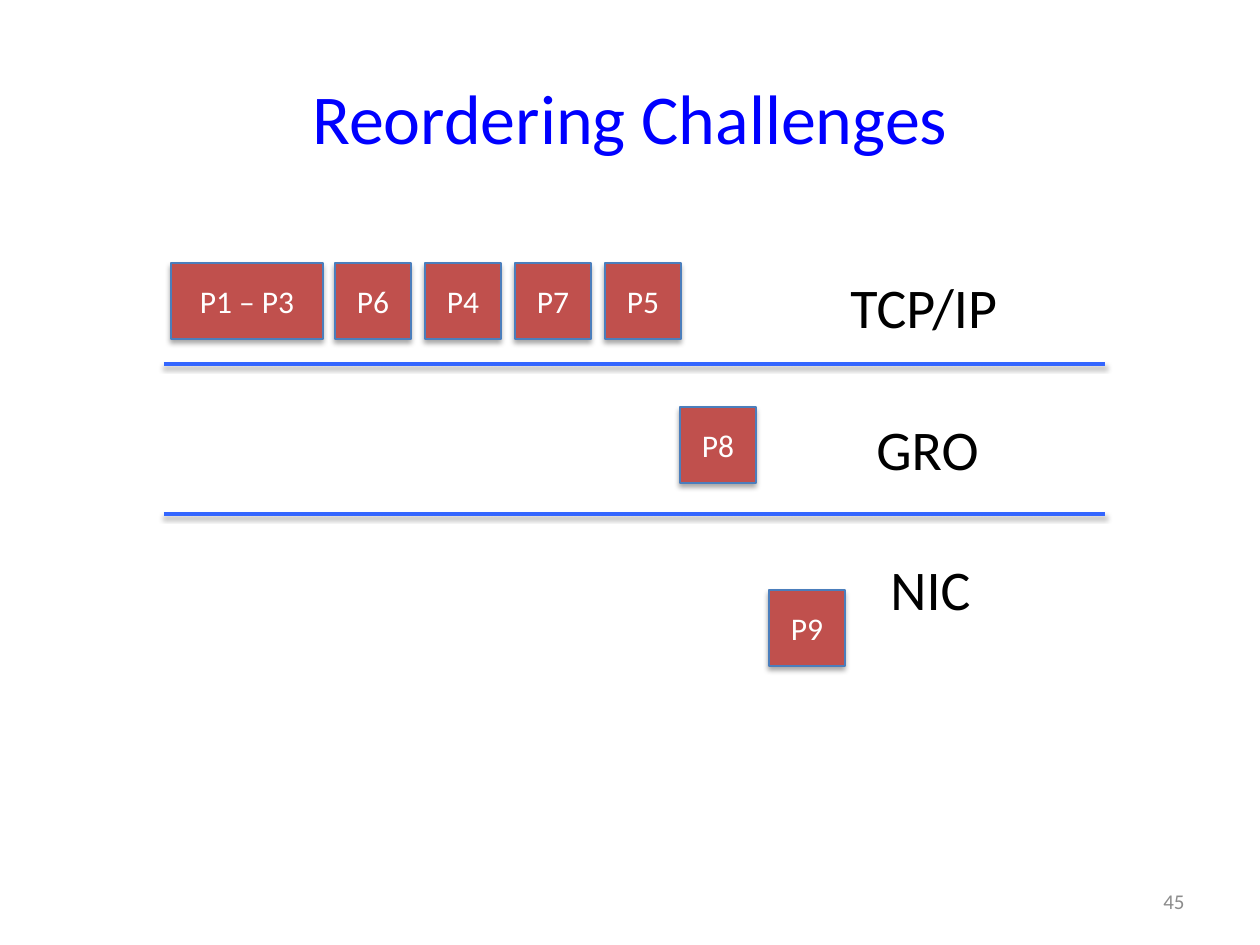
from dataclasses import dataclass

from lxml.etree import SubElement
from pptx import Presentation
from pptx.dml.color import RGBColor
from pptx.enum.shapes import MSO_CONNECTOR, MSO_SHAPE
from pptx.enum.text import MSO_ANCHOR, MSO_AUTO_SIZE, PP_ALIGN
from pptx.oxml.ns import qn
from pptx.util import Pt

EMU_PER_PX = 914400 / 126


@dataclass(frozen=True)
class Theme:
    font: str = "Calibri"
    title: str = "0000FF"
    label: str = "000000"
    number: str = "8C8C8C"
    packet: str = "C0504D"
    packet_edge: str = "4B7EBC"
    packet_text: str = "FFFFFF"
    divider: str = "3366FF"
    shadow: str = "000000"
    title_size: int = 40
    label_size: int = 32
    packet_size: int = 18
    number_size: int = 12


THEME = Theme()
PACKET_SIDE = 76
PACKET_PITCH = 90


def px(length):
    return round(length * EMU_PER_PX)


def emu_box(box):
    return [px(length) for length in box]


def write_text(shape, text, *, size, color, align=PP_ALIGN.LEFT,
               anchor=MSO_ANCHOR.TOP, wrap=True):
    frame = shape.text_frame
    frame.word_wrap = wrap
    frame.vertical_anchor = anchor
    paragraph = frame.paragraphs[0]
    paragraph.alignment = align
    run = paragraph.add_run()
    run.text = text
    run.font.name = THEME.font
    run.font.size = Pt(size)
    run.font.color.rgb = RGBColor.from_string(color)
    return frame


def add_text(slide, box, text, **text_format):
    return write_text(slide.shapes.add_textbox(*emu_box(box)), text, **text_format)


def add_shadow(properties, distance, alpha):
    effects = SubElement(properties, qn("a:effectLst"))
    shadow = SubElement(effects, qn("a:outerShdw"), blurRad=str(Pt(3.1)),
                        dist=str(Pt(distance)), dir="5400000", rotWithShape="0")
    color = SubElement(shadow, qn("a:srgbClr"), val=THEME.shadow)
    SubElement(color, qn("a:alpha"), val=str(alpha * 1000))


def add_packet(slide, box, name):
    packet = slide.shapes.add_shape(MSO_SHAPE.RECTANGLE, *emu_box(box))
    packet.fill.solid()
    packet.fill.fore_color.rgb = RGBColor.from_string(THEME.packet)
    packet.line.color.rgb = RGBColor.from_string(THEME.packet_edge)
    packet.line.width = Pt(0.75)
    add_shadow(packet.element.spPr, distance=1.8, alpha=35)
    write_text(packet, name, size=THEME.packet_size, color=THEME.packet_text,
               align=PP_ALIGN.CENTER, anchor=MSO_ANCHOR.MIDDLE)


def add_divider(slide, left, right, y):
    divider = slide.shapes.add_connector(
        MSO_CONNECTOR.STRAIGHT, px(left), px(y), px(right), px(y))
    divider.line.color.rgb = RGBColor.from_string(THEME.divider)
    divider.line.width = Pt(2)
    add_shadow(divider.element.spPr, distance=1.6, alpha=38)


def add_layer(slide, box, label, label_box, packets, packet_top, divided):
    """One layer of the network stack; packets are (name, left, width)."""
    left, top, width, height = box
    for name, packet_left, packet_width in packets:
        add_packet(slide, (left + packet_left, top + packet_top,
                           packet_width, PACKET_SIDE), name)
    if divided:
        add_divider(slide, left, left + width, top + height)
    label_left, label_top, label_width = label_box
    frame = add_text(slide, (left + label_left, top + label_top, label_width, 81),
                     label, size=THEME.label_size, color=THEME.label, wrap=False)
    frame.auto_size = MSO_AUTO_SIZE.SHAPE_TO_FIT_TEXT


def add_stack(slide, box):
    left, top, width, height = box
    layer_height = height // 3
    # Merged segment first, then the out-of-order packets at an equal pitch
    delivered = [("P1 – P3", 7, 2 * PACKET_SIDE)] + [
        (name, 171 + index * PACKET_PITCH, PACKET_SIDE)
        for index, name in enumerate(("P6", "P4", "P7", "P5"))]
    layers = (
        ("TCP/IP", (674, 52, 178), delivered, 49),
        ("GRO", (700, 44, 130), [("P8", 516, PACKET_SIDE)], 43),
        ("NIC", (714, 34, 106), [("P9", 605, PACKET_SIDE)], 76),
    )
    for index, layer in enumerate(layers):
        add_layer(slide, (left, top + index * layer_height, width, layer_height),
                  *layer, divided=index < len(layers) - 1)


def main():
    presentation = Presentation()
    presentation.slide_width, presentation.slide_height = px(1260), px(945)
    slide = presentation.slides.add_slide(presentation.slide_layouts[6])

    # Title
    add_text(slide, (63, 38, 1134, 157), "Reordering Challenges",
             size=THEME.title_size, color=THEME.title,
             align=PP_ALIGN.CENTER, anchor=MSO_ANCHOR.MIDDLE)
    # Network stack
    add_stack(slide, (164, 214, 941, 450))
    # Slide number
    add_text(slide, (903, 876, 294, 50), "45", size=THEME.number_size,
             color=THEME.number, align=PP_ALIGN.RIGHT, anchor=MSO_ANCHOR.MIDDLE)

    presentation.save("out.pptx")


if __name__ == "__main__":
    main()
